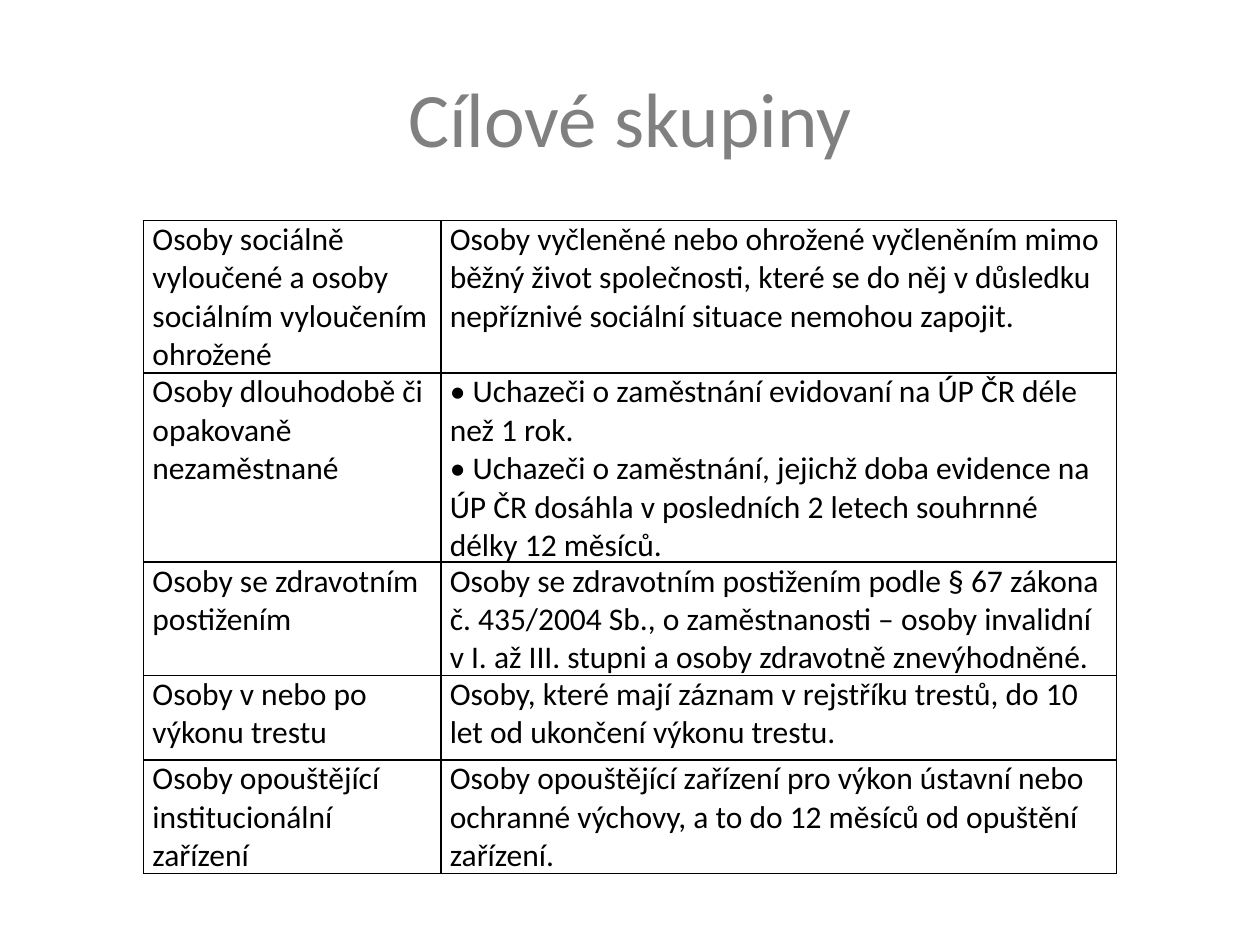
from lxml.etree import SubElement
from pptx import Presentation
from pptx.dml.color import RGBColor
from pptx.enum.text import MSO_ANCHOR, PP_ALIGN
from pptx.oxml.ns import qn
from pptx.util import Inches, Pt

BLACK = RGBColor(0x00, 0x00, 0x00)
GRAY = RGBColor(0x80, 0x80, 0x80)

COLS = [2.36, 5.36]
ROWS = [1.21, 1.09, 0.79, 0.67, 0.63]
GROUPS = [
    ("Osoby sociálně vyloučené a osoby sociálním vyloučením ohrožené",
     "Osoby vyčleněné nebo ohrožené vyčleněním mimo běžný život společnosti, "
     "které se do něj v důsledku nepříznivé sociální situace nemohou zapojit."),
    ("Osoby dlouhodobě či opakovaně nezaměstnané",
     "• Uchazeči o zaměstnání evidovaní na ÚP ČR déle než 1 rok.\n"
     "• Uchazeči o zaměstnání, jejichž doba evidence na ÚP ČR dosáhla "
     "v posledních 2 letech souhrnné délky 12 měsíců."),
    ("Osoby se zdravotním postižením",
     "Osoby se zdravotním postižením podle § 67 zákona č. 435/2004 Sb., "
     "o zaměstnanosti – osoby invalidní v I. až III. stupni a osoby "
     "zdravotně znevýhodněné."),
    ("Osoby v nebo po výkonu trestu",
     "Osoby, které mají záznam v rejstříku trestů, do 10 let od ukončení "
     "výkonu trestu."),
    ("Osoby opouštějící institucionální zařízení",
     "Osoby opouštějící zařízení pro výkon ústavní nebo ochranné výchovy, "
     "a to do 12 měsíců od opuštění zařízení."),
]


def assign(item, values):
    for name, value in values.items():
        setattr(item, name, value)


class Deck:
    font = "Calibri"
    pad = {"margin_left": Inches(0.07), "margin_right": Inches(0.07),
           "margin_top": 0, "margin_bottom": 0}

    def __init__(self, wide, high):
        self.prs = Presentation()
        assign(self.prs, {"slide_width": Inches(wide),
                          "slide_height": Inches(high)})
        self.slide = self.prs.slides.add_slide(self.prs.slide_layouts[6])

    def label(self, frame, text, size, color, align):
        frame.text = text
        for para in frame.paragraphs:
            para.alignment = align
            for run in para.runs:
                assign(run.font, {"name": self.font, "size": Pt(size)})
                run.font.color.rgb = color

    def title(self, text, *box):
        frame = self.slide.shapes.add_textbox(*map(Inches, box)).text_frame
        assign(frame, {"word_wrap": True, "vertical_anchor": MSO_ANCHOR.MIDDLE})
        self.label(frame, text, 44, GRAY, PP_ALIGN.CENTER)

    def border(self, cell):
        """Rule all four sides of a cell; lines must precede the fill."""
        props = cell._tc.get_or_add_tcPr()
        for side in ("a:lnL", "a:lnR", "a:lnT", "a:lnB"):
            line = SubElement(props, qn(side), w=str(Pt(1)))
            fill = SubElement(line, qn("a:solidFill"))
            SubElement(fill, qn("a:srgbClr"), val=str(BLACK))

    def table(self, left, top, cols, rows, data):
        box = map(Inches, (left, top, sum(cols), sum(rows)))
        grid = self.slide.shapes.add_table(len(rows), len(cols), *box).table
        assign(grid, {"first_row": False, "horz_banding": False})
        for col, width in zip(grid.columns, cols):
            col.width = Inches(width)
        for row, height, texts in zip(grid.rows, rows, data):
            row.height = Inches(height)
            for cell, text in zip(row.cells, texts):
                assign(cell, self.pad)
                self.label(cell.text_frame, text, 18, BLACK, PP_ALIGN.LEFT)
                self.border(cell)
                cell.fill.background()

    def save(self):
        self.prs.save("out.pptx")


def main():
    deck = Deck(10, 7.5)
    deck.title("Cílové skupiny", 0.5, 0.3, 9, 1.25)
    deck.table(1.14, 1.75, COLS, ROWS, GROUPS)
    deck.save()


if __name__ == "__main__":
    main()
